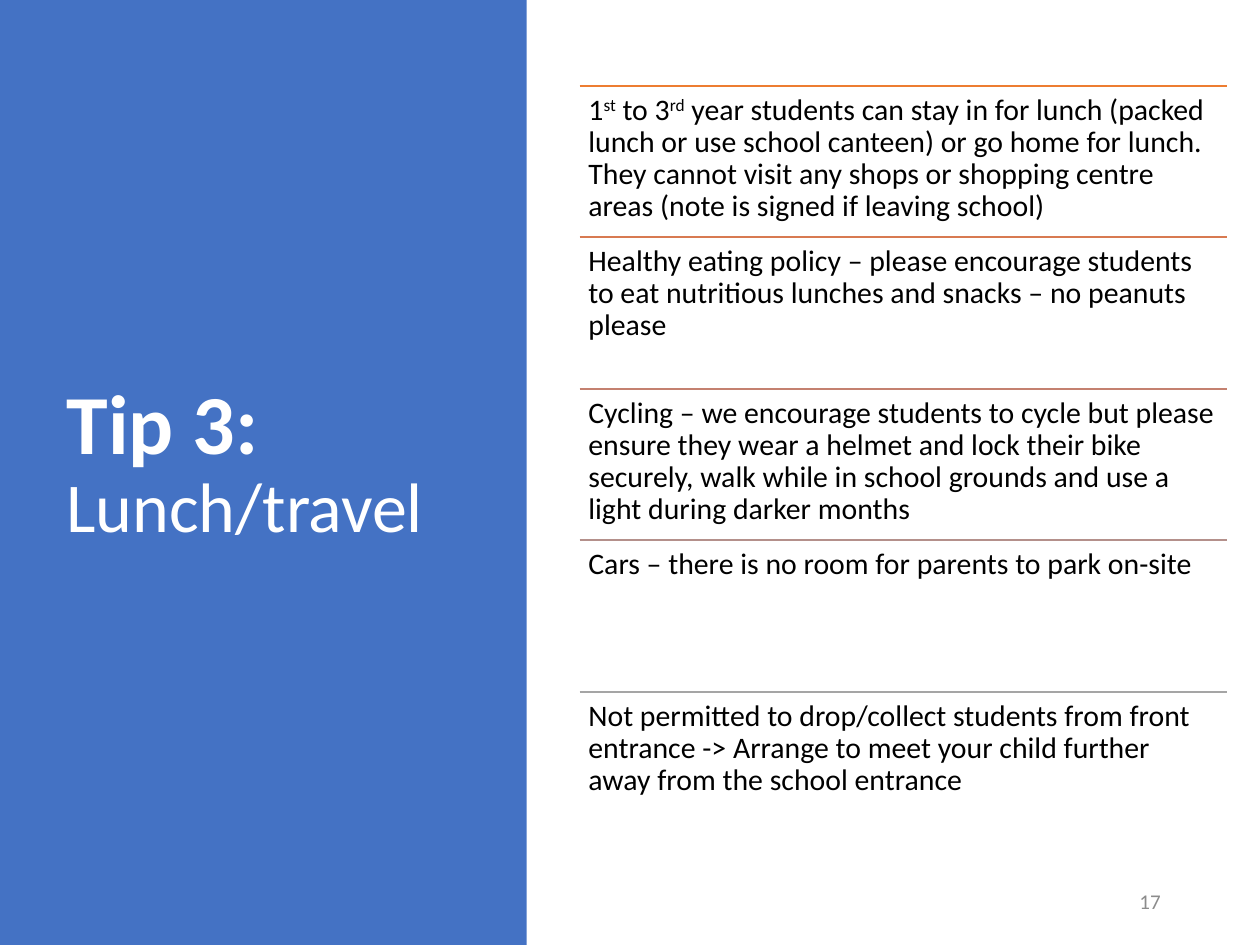
"""Build the Tip 3 slide on lunch and travel."""
from lxml import etree
from pptx import Presentation
from pptx.dml.color import RGBColor
from pptx.enum.shapes import MSO_CONNECTOR, MSO_SHAPE
from pptx.enum.text import MSO_ANCHOR, PP_ALIGN
from pptx.oxml.ns import qn
from pptx.util import Inches, Pt

BLUE = RGBColor(0x44, 0x72, 0xC4)
WHITE = RGBColor(0xFF, 0xFF, 0xFF)
BLACK = RGBColor(0x00, 0x00, 0x00)
GREY = RGBColor(0x8C, 0x8C, 0x8C)
RULES = [
    RGBColor(0xED, 0x7D, 0x31),
    RGBColor(0xD8, 0x7A, 0x51),
    RGBColor(0xC4, 0x81, 0x70),
    RGBColor(0xB4, 0x90, 0x8B),
    RGBColor(0xA5, 0xA5, 0xA5),
]
TIPS = [
    ["1", "st", " to 3", "rd",
     " year students can stay in for lunch (packed lunch or use school canteen) "
     "or go home for lunch. They cannot visit any shops or shopping centre areas "
     "(note is signed if leaving school)"],
    ["Healthy eating policy – please encourage students to eat nutritious lunches "
     "and snacks – no peanuts please"],
    ["Cycling – we encourage students to cycle but please ensure they wear a helmet "
     "and lock their bike securely, walk while in school grounds and use a light "
     "during darker months"],
    ["Cars – there is no room for parents to park on-site"],
    ["Not permitted to drop/collect students from front entrance -> Arrange to meet "
     "your child further away from the school entrance"],
]
LEFT, TOP, WIDTH, STEP = 4.6, 0.68, 5.14, 1.2025


def add_text(left, top, width, height, anchor):
    tf = s.shapes.add_textbox(Inches(left), Inches(top), Inches(width), Inches(height)).text_frame
    tf.word_wrap = True
    tf.vertical_anchor = anchor
    return tf


def add_run(p, text, size, color, bold=False):
    r = p.add_run()
    r.text = text
    r.font.name = "Calibri"
    r.font.size = Pt(size)
    r.font.bold = bold
    r.font.color.rgb = color
    return r


prs = Presentation()
prs.slide_width = Inches(10)
prs.slide_height = Inches(7.5)
s = prs.slides.add_slide(prs.slide_layouts[6])

panel = s.shapes.add_shape(MSO_SHAPE.RECTANGLE, 0, 0, Inches(4.18), Inches(7.5))
panel.shadow.inherit = False
panel.fill.solid()
panel.fill.fore_color.rgb = BLUE
panel.line.fill.background()

p = add_text(0.43, 0.68, 3.12, 6.02, MSO_ANCHOR.MIDDLE).paragraphs[0]
p.line_spacing = 0.9
add_run(p, "Tip 3:", 48, WHITE, True)
add_run(p, " Lunch/travel", 40, WHITE)

p = add_text(7.06, 6.95, 2.25, 0.4, MSO_ANCHOR.MIDDLE).paragraphs[0]
p.alignment = PP_ALIGN.RIGHT
add_run(p, "17", 12, GREY)

for i, (color, parts) in enumerate(zip(RULES, TIPS)):
    top = TOP + i * STEP
    line = s.shapes.add_connector(MSO_CONNECTOR.STRAIGHT, Inches(LEFT), Inches(top),
                                  Inches(LEFT + WIDTH), Inches(top))
    line.line.color.rgb = color
    line.line.width = Pt(1)
    etree.SubElement(line._element.spPr, qn("a:effectLst"))

    tf = add_text(LEFT, top, WIDTH, STEP, MSO_ANCHOR.TOP)
    tf.margin_left = tf.margin_right = tf.margin_top = tf.margin_bottom = Inches(0.07)
    p = tf.paragraphs[0]
    p.line_spacing = 0.9
    for text in parts:
        r = add_run(p, text, 17, BLACK)
        if text in ("st", "rd"):
            r.font._element.set("baseline", "30000")

prs.save("out.pptx")
